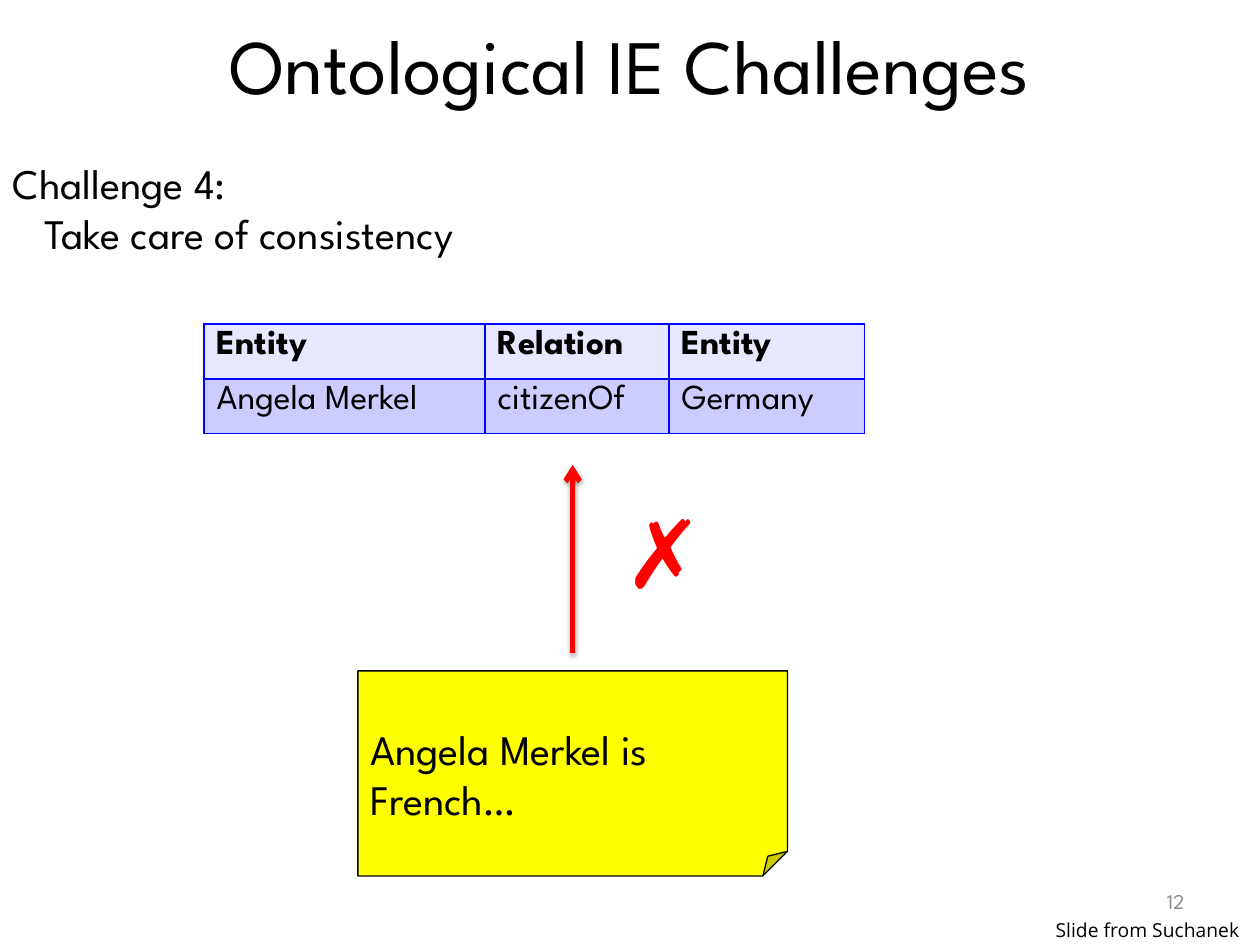
from dataclasses import dataclass

from lxml import etree
from pptx import Presentation
from pptx import util as u
from pptx.dml.color import RGBColor
from pptx.enum import shapes, text
from pptx.oxml import parse_xml
from pptx.oxml.ns import nsdecls, qn

WIDTH, HEIGHT = 10, 7.5
MAIN_FONT, CREDIT_FONT = "League Spartan", "Open Sans"
COLORS = {"ink": "000000", "muted": "8C8C8C", "alert": "FF0000", "note": "FFFF00",
          "grid": "0001FF", "header": "E7E7FF", "row": "CCCCFF"}


@dataclass
class Area:
    """Place on the page, as shares of its width and height."""
    left: float
    top: float
    width: float
    height: float

    def lengths(self):
        return (u.Inches(self.left * WIDTH), u.Inches(self.top * HEIGHT),
                u.Inches(self.width * WIDTH), u.Inches(self.height * HEIGHT))


@dataclass
class Style:
    size: float
    color: str = "ink"
    font: str = MAIN_FONT
    bold: bool = False
    align: text.PP_ALIGN = text.PP_ALIGN.LEFT


@dataclass
class Label:
    words: str
    area: Area
    style: Style
    anchor: text.MSO_ANCHOR = text.MSO_ANCHOR.TOP
    wrap: bool = False


def rgb(name: str) -> RGBColor:
    return RGBColor.from_string(COLORS[name])


def write(para, words: str, style: Style) -> None:
    para.alignment = style.align
    span = para.add_run()
    span.text = words
    span.font.size = u.Pt(style.size)
    span.font.name = style.font
    span.font.bold = style.bold
    span.font.color.rgb = rgb(style.color)


def place(box, area: Area) -> None:
    box.left, box.top, box.width, box.height = area.lengths()


def add_label(page, label: Label) -> None:
    frame = page.shapes.add_textbox(*label.area.lengths()).text_frame
    frame.word_wrap = label.wrap
    frame.vertical_anchor = label.anchor
    write(frame.paragraphs[0], label.words, label.style)


def fill_list(box, lines: list, style: Style, indent: float) -> None:
    """Write unbulleted lines; those after the first are indented."""
    frame = box.text_frame
    frame.auto_size = text.MSO_AUTO_SIZE.NONE
    for number, words in enumerate(lines):
        para = frame.add_paragraph() if number else frame.paragraphs[0]
        para.space_before = u.Pt(0)
        write(para, words, style)
        props = para._p.get_or_add_pPr()
        props.set("marL", str(u.Inches(indent if number else 0)))
        props.set("indent", "0")
        etree.SubElement(props, qn("a:buNone"))


def outline_cell(cell) -> None:
    props = cell._tc.get_or_add_tcPr()
    for position, side in enumerate(("lnL", "lnR", "lnT", "lnB")):
        props.insert(position, parse_xml(
            f'<a:{side} {nsdecls("a")} w="{u.Pt(1)}"><a:solidFill>'
            f'<a:srgbClr val="{COLORS["grid"]}"/></a:solidFill></a:{side}>'))


def add_facts(page, area: Area, columns: list, rows: list) -> None:
    table = page.shapes.add_table(len(rows), len(columns), *area.lengths()).table
    for column, width in zip(table.columns, columns):
        column.width = u.Inches(width)
    for r, row in enumerate(rows):
        for c, words in enumerate(row):
            cell = table.cell(r, c)
            cell.fill.solid()
            cell.fill.fore_color.rgb = rgb("row" if r else "header")
            outline_cell(cell)
            write(cell.text_frame.paragraphs[0], words, Style(20, bold=r == 0))


def add_arrow(page, x: float, start: float, end: float) -> None:
    arrow = page.shapes.add_connector(
        shapes.MSO_CONNECTOR.STRAIGHT, u.Inches(x * WIDTH), u.Inches(start * HEIGHT),
        u.Inches(x * WIDTH), u.Inches(end * HEIGHT))
    arrow.line.color.rgb = rgb("alert")
    arrow.line.width = u.Pt(3)
    etree.SubElement(arrow.line._get_or_add_ln(), qn("a:tailEnd"), type="arrow")
    arrow._element.spPr.append(parse_xml(
        f'<a:effectLst {nsdecls("a")}><a:outerShdw blurRad="{u.Pt(3.1)}" '
        f'dist="{u.Pt(1.6)}" dir="5400000" rotWithShape="0"><a:srgbClr val="{COLORS["ink"]}">'
        '<a:alpha val="38000"/></a:srgbClr></a:outerShdw></a:effectLst>'))


def add_note(page, words: str, area: Area) -> None:
    note = page.shapes.add_shape(shapes.MSO_SHAPE.FOLDED_CORNER, *area.lengths())
    note.shadow.inherit = False
    # Fold size, as a share of the shorter side
    guides = note._element.spPr.find(qn("a:prstGeom")).get_or_add_avLst()
    etree.SubElement(guides, qn("a:gd"), name="adj", fmla="val 12000")
    note.fill.solid()
    note.fill.fore_color.rgb = rgb("note")
    note.line.color.rgb = rgb("ink")
    note.line.width = u.Pt(0.75)
    frame = note.text_frame
    frame.word_wrap = True
    frame.vertical_anchor = text.MSO_ANCHOR.MIDDLE
    frame.margin_top, frame.margin_bottom = u.Inches(0.2), 0
    write(frame.paragraphs[0], words, Style(24))


def main() -> None:
    deck = Presentation()
    deck.slide_width, deck.slide_height = u.Inches(WIDTH), u.Inches(HEIGHT)
    page = deck.slides.add_slide(deck.slide_layouts[1])

    # Title and challenge
    title, body = page.placeholders
    place(title, Area(0.05, 0, 0.9, 0.135))
    write(title.text_frame.paragraphs[0], "Ontological IE Challenges",
          Style(44, align=text.PP_ALIGN.CENTER))
    place(body, Area(0, 0.16, 1, 0.12))
    fill_list(body, ["Challenge 4:", "Take care of consistency"], Style(24), 0.25)

    # Known fact
    add_facts(page, Area(0.162, 0.343, 0.525, 0.116), [2.23, 1.46, 1.55],
              [["Entity", "Relation", "Entity"],
               ["Angela Merkel", "citizenOf", "Germany"]])

    # Contradicting note, centred under its arrow
    note = Area(0.284, 0.71, 0.341, 0.217)
    add_arrow(page, note.left + note.width / 2, 0.691, 0.492)
    add_note(page, "Angela Merkel is French…", note)

    # Cross, page number and credit
    for label in (
        Label("✗", Area(0.486, 0.516, 0.068, 0.135), Style(54, "alert")),
        Label("12", Area(0.717, 0.927, 0.233, 0.053),
              Style(12, "muted", align=text.PP_ALIGN.RIGHT), text.MSO_ANCHOR.MIDDLE, True),
        Label("Slide from Suchanek", Area(0.828, 0.965, 0.172, 0.039),
              Style(11, font=CREDIT_FONT)),
    ):
        add_label(page, label)

    deck.save("out.pptx")


if __name__ == "__main__":
    main()
